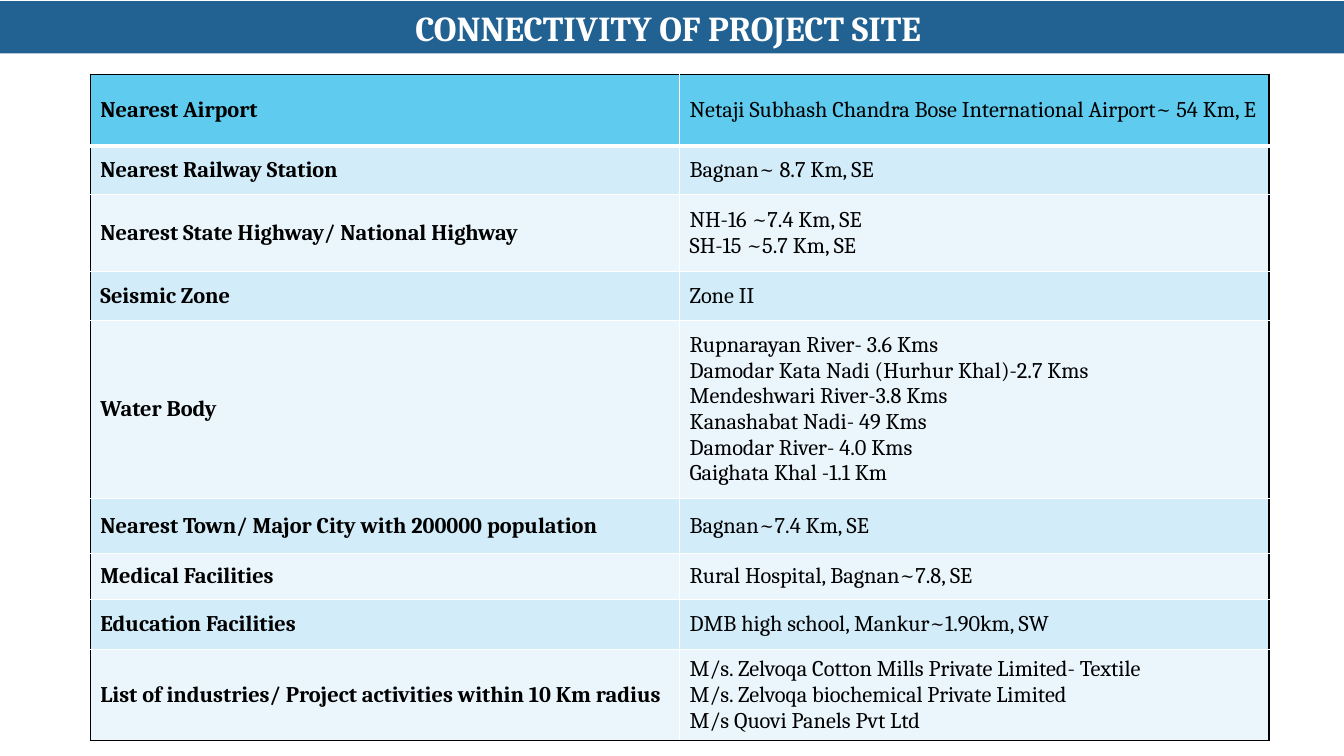
"""Build the slide on the connectivity of the project site."""
from dataclasses import dataclass

from lxml import etree
from pptx import Presentation
from pptx.dml.color import RGBColor
from pptx.enum.text import MSO_ANCHOR, MSO_AUTO_SIZE, PP_ALIGN
from pptx.oxml.ns import qn
from pptx.slide import Slide
from pptx.table import _Cell
from pptx.text.text import TextFrame
from pptx.util import Pt

CENTER = PP_ALIGN.CENTER
LEFT = PP_ALIGN.LEFT
MIDDLE = MSO_ANCHOR.MIDDLE
NO_AUTOFIT = MSO_AUTO_SIZE.NONE

BLACK = RGBColor(0x00, 0x00, 0x00)
WHITE = RGBColor(0xFF, 0xFF, 0xFF)
BANNER_BLUE = RGBColor(0x22, 0x62, 0x92)
HEADER_BLUE = RGBColor(0x5F, 0xCB, 0xEF)
DARK_BAND = RGBColor(0xD2, 0xEC, 0xF9)
LIGHT_BAND = RGBColor(0xEA, 0xF6, 0xFC)

FONT = "Cambria"
SLIDE_WIDTH = 960
TITLE_ONLY_LAYOUT = 5


@dataclass(frozen=True)
class Feature:
    label: str
    details: tuple[str, ...]
    height: float


@dataclass(frozen=True)
class Border:
    tag: str
    color: RGBColor
    width: float = 1


FEATURES = (
    Feature("Nearest Airport",
            ("Netaji Subhash Chandra Bose International Airport~ 54 Km, E",), 51),
    Feature("Nearest Railway Station", ("Bagnan~ 8.7 Km, SE",), 34.5),
    Feature("Nearest State Highway/ National Highway",
            ("NH-16 ~7.4 Km, SE", "SH-15 ~5.7 Km, SE"), 55.5),
    Feature("Seismic Zone", ("Zone II",), 34.5),
    Feature("Water Body",
            ("Rupnarayan River- 3.6 Kms",
             "Damodar Kata Nadi (Hurhur Khal)-2.7 Kms",
             "Mendeshwari River-3.8 Kms",
             "Kanashabat Nadi- 49 Kms",
             "Damodar River- 4.0 Kms",
             "Gaighata Khal -1.1 Km"), 127.5),
    Feature("Nearest Town/ Major City with 200000 population",
            ("Bagnan~7.4 Km, SE",), 39),
    Feature("Medical Facilities", ("Rural Hospital, Bagnan~7.8, SE",), 33),
    Feature("Education Facilities", ("DMB high school, Mankur~1.90km, SW",), 36),
    Feature("List of industries/ Project activities within 10 Km radius",
            ("M/s. Zelvoqa Cotton Mills Private Limited- Textile",
             "M/s. Zelvoqa biochemical Private Limited",
             "M/s Quovi Panels Pvt Ltd"), 64.8),
)


def write_lines(frame: TextFrame, lines: tuple[str, ...], size: float,
                color: RGBColor, bold: bool, alignment: PP_ALIGN) -> None:
    frame.text = "\n".join(lines)
    for paragraph in frame.paragraphs:
        paragraph.alignment = alignment
        paragraph.font.name = FONT
        paragraph.font.size = Pt(size)
        paragraph.font.bold = bold
        paragraph.font.color.rgb = color


def add_border(cell: _Cell, border: Border) -> None:
    properties = cell._tc.get_or_add_tcPr()
    line = etree.SubElement(properties, qn(f"a:{border.tag}"), w=str(Pt(border.width)))
    fill = etree.SubElement(line, qn("a:solidFill"))
    etree.SubElement(fill, qn("a:srgbClr"), val=str(border.color))


def cell_borders(row: int, column: int) -> tuple[Border, ...]:
    last_row = len(FEATURES) - 1
    return (
        Border("lnL", BLACK if column == 0 else WHITE),
        Border("lnR", BLACK if column == 1 else WHITE),
        Border("lnT", BLACK if row == 0 else WHITE, 3 if row == 1 else 1),
        Border("lnB", BLACK if row == last_row else WHITE, 3 if row == 0 else 1),
    )


def row_color(row: int) -> RGBColor:
    if row == 0:
        return HEADER_BLUE
    return DARK_BAND if row % 2 else LIGHT_BAND


def add_banner(page: Slide) -> None:
    banner = page.shapes.title
    banner.left, banner.top = Pt(0), Pt(0.75)
    banner.width, banner.height = Pt(SLIDE_WIDTH), Pt(37.5)
    banner.fill.solid()
    banner.fill.fore_color.rgb = BANNER_BLUE
    frame = banner.text_frame
    frame.word_wrap = True
    frame.auto_size = NO_AUTOFIT
    frame.vertical_anchor = MIDDLE
    write_lines(frame, ("CONNECTIVITY OF PROJECT SITE ",), 25, WHITE, True, CENTER)


def add_feature_table(page: Slide) -> None:
    height = sum(feature.height for feature in FEATURES)
    table = page.shapes.add_table(
        len(FEATURES), 2, Pt(64.5), Pt(53.2), Pt(842), Pt(height)).table
    table.first_row = False
    table.horz_banding = False
    for row, feature in enumerate(FEATURES):
        table.rows[row].height = Pt(feature.height)
        for column, lines in enumerate(((feature.label,), feature.details)):
            cell = table.cell(row, column)
            for border in cell_borders(row, column):
                add_border(cell, border)
            cell.fill.solid()
            cell.fill.fore_color.rgb = row_color(row)
            cell.vertical_anchor = MIDDLE
            write_lines(cell.text_frame, lines, 16, BLACK, column == 0, LEFT)


def main() -> None:
    deck = Presentation()
    deck.slide_width, deck.slide_height = Pt(SLIDE_WIDTH), Pt(540)
    page = deck.slides.add_slide(deck.slide_layouts[TITLE_ONLY_LAYOUT])
    add_banner(page)
    add_feature_table(page)
    deck.save("out.pptx")


if __name__ == "__main__":
    main()
